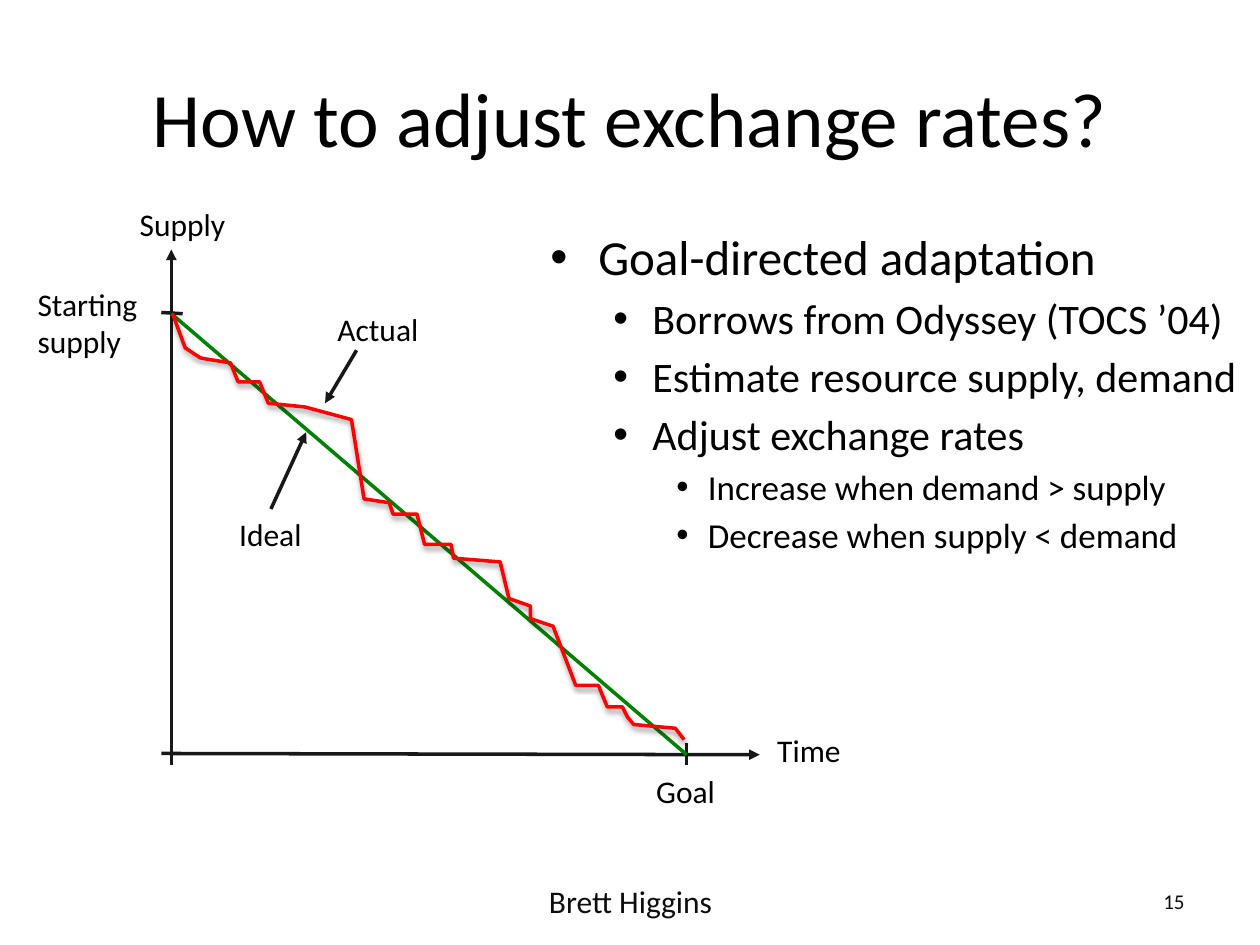
from lxml.etree import SubElement
from pptx import Presentation
from pptx.dml.color import RGBColor
from pptx.enum.shapes import MSO_CONNECTOR
from pptx.enum.text import MSO_ANCHOR, MSO_AUTO_SIZE, PP_ALIGN
from pptx.oxml.ns import qn
from pptx.util import Pt

EMU_PER_PX = 9144
BLACK = RGBColor(0x00, 0x00, 0x00)
FOOTER_GRAY = RGBColor(0x0D, 0x0D, 0x0D)
AXIS_GRAY = RGBColor(0x18, 0x18, 0x18)
IDEAL_GREEN = RGBColor(0x00, 0x80, 0x00)
ACTUAL_RED = RGBColor(0xFF, 0x00, 0x00)

BULLET_LEVELS = [
    {"size": 28, "left": 38, "hang": 38, "before": 5},
    {"size": 24, "left": 81, "hang": 31, "before": 4.2},
    {"size": 20, "left": 125, "hang": 25, "before": 3.6},
]
BULLETS = [
    (0, "Goal-directed adaptation"),
    (1, "Borrows from Odyssey (TOCS ’04)"),
    (1, "Estimate resource supply, demand"),
    (1, "Adjust exchange rates"),
    (2, "Increase when demand > supply"),
    (2, "Decrease when supply < demand"),
]
LABELS = [
    ("Time", (607, 575, 71, 40)),
    ("Supply", (101, 158, 89, 40)),
    ("Goal", (511, 608, 67, 40)),
    ("Starting\nsupply", (20, 221, 100, 71)),
    ("Ideal", (180, 404, 70, 40)),
    ("Actual", (258, 241, 85, 40)),
]
ARROWS = [
    ((136, 607), (136, 198)),
    ((128, 598), (603, 599)),
    ((215, 404), (243, 343)),
    ((283, 278), (258, 320)),
]
TICKS = [((128, 248), (145, 249)), ((545, 590), (545, 607))]
ACTUAL_SUPPLY = [
    (137, 249), (147, 276), (159, 284), (164, 285), (183, 288), (189, 303),
    (206, 303), (213, 320), (242, 323), (279, 333), (289, 396), (309, 399),
    (312, 408), (331, 408), (337, 432), (358, 432), (360, 443), (397, 446),
    (404, 475), (421, 481), (421, 491), (439, 497), (457, 544), (475, 544),
    (482, 561), (494, 561), (498, 569), (503, 575), (536, 578), (543, 587),
]


def px(value):
    return value * EMU_PER_PX


def set_attributes(target, values):
    for name, value in values.items():
        setattr(target, name, value)


def add_run(paragraph, text, size, color):
    run = paragraph.add_run()
    run.text = text
    set_attributes(run.font, {"name": "Calibri", "size": Pt(size)})
    run.font.color.rgb = color


def add_text(shapes, text, box, size=18, color=BLACK, align=PP_ALIGN.LEFT, **frame_format):
    frame = shapes.add_textbox(*map(px, box)).text_frame
    set_attributes(frame, {"word_wrap": True, **frame_format})
    for index, line in enumerate(text.split("\n")):
        paragraph = frame.add_paragraph() if index else frame.paragraphs[0]
        paragraph.alignment = align
        add_run(paragraph, line, size, color)


def add_bullets(shapes, items, box):
    frame = shapes.add_textbox(*map(px, box)).text_frame
    frame.word_wrap = True
    for index, (level, text) in enumerate(items):
        style = BULLET_LEVELS[level]
        paragraph = frame.add_paragraph() if index else frame.paragraphs[0]
        properties = paragraph._p.get_or_add_pPr()
        properties.set("marL", str(px(style["left"])))
        properties.set("indent", str(-px(style["hang"])))
        SubElement(properties, qn("a:buFont"), typeface="Arial")
        SubElement(properties, qn("a:buChar"), char="•")
        paragraph.level = level
        if index:
            paragraph.space_before = Pt(style["before"])
        add_run(paragraph, text, style["size"], BLACK)


def add_line(shapes, start, end, color=AXIS_GRAY, arrow=False):
    connector = shapes.add_connector(MSO_CONNECTOR.STRAIGHT, *map(px, start + end))
    connector.line.color.rgb = color
    connector.line.width = Pt(2)
    if arrow:
        SubElement(connector.line._get_or_add_ln(), qn("a:tailEnd"), type="triangle")
    SubElement(connector._element.spPr, qn("a:effectLst"))


def add_supply_curve(shapes, points):
    builder = shapes.build_freeform(*points[0], scale=EMU_PER_PX)
    builder.add_line_segments(points[1:], close=False)
    curve = builder.convert_to_shape()
    curve.fill.background()
    curve.line.color.rgb = ACTUAL_RED
    curve.line.width = Pt(2)
    effects = SubElement(curve._element.spPr, qn("a:effectLst"))
    shadow = SubElement(effects, qn("a:outerShdw"), blurRad=str(Pt(3.1)),
                        dist=str(Pt(1.6)), dir="5400000", rotWithShape="0")
    shadow_color = SubElement(shadow, qn("a:srgbClr"), val=str(BLACK))
    SubElement(shadow_color, qn("a:alpha"), val="38000")


def add_supply_graph(slide):
    shapes = slide.shapes.add_group_shape().shapes
    for start, end in ARROWS:
        add_line(shapes, start, end, arrow=True)
    for start, end in TICKS:
        add_line(shapes, start, end)
    add_line(shapes, (136, 249), (545, 599), IDEAL_GREEN)
    add_supply_curve(shapes, ACTUAL_SUPPLY)
    for text, box in LABELS:
        add_text(shapes, text, box, word_wrap=False,
                 auto_size=MSO_AUTO_SIZE.SHAPE_TO_FIT_TEXT)


def main():
    presentation = Presentation()
    set_attributes(presentation, {"slide_width": px(1000), "slide_height": px(750)})
    slide = presentation.slides.add_slide(presentation.slide_layouts[6])
    middle = {"vertical_anchor": MSO_ANCHOR.MIDDLE}
    add_text(slide.shapes, "How to adjust exchange rates?", (50, 30, 900, 125),
             size=44, align=PP_ALIGN.CENTER, **middle)
    add_bullets(slide.shapes, BULLETS, (427, 175, 590, 495))
    add_text(slide.shapes, "Brett Higgins", (342, 695, 317, 40),
             color=FOOTER_GRAY, align=PP_ALIGN.CENTER, **middle)
    add_text(slide.shapes, "15", (717, 695, 233, 40),
             size=12, color=FOOTER_GRAY, align=PP_ALIGN.RIGHT, **middle)
    add_supply_graph(slide)
    presentation.save("out.pptx")


if __name__ == "__main__":
    main()
